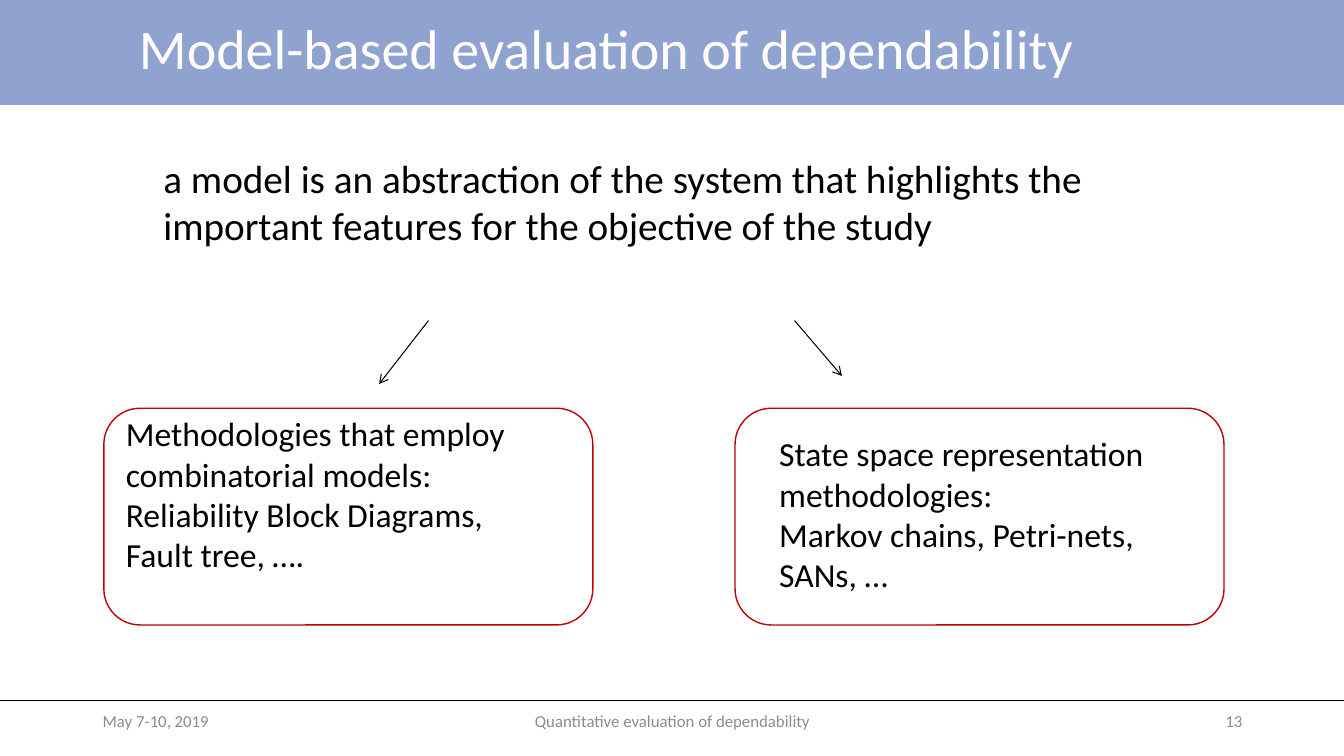
"""Build the slide on model-based evaluation of dependability."""
from dataclasses import dataclass

from lxml.etree import SubElement
from pptx import Presentation
from pptx.dml.color import RGBColor
from pptx.enum.shapes import MSO_CONNECTOR as Connector, MSO_SHAPE as Shape
from pptx.enum.text import MSO_ANCHOR as Anchor, MSO_AUTO_SIZE as AutoSize, PP_ALIGN as Align
from pptx.oxml.ns import qn
from pptx.util import Pt

PX = 9144
WIDTH, HEIGHT = 1333, 750


@dataclass(frozen=True)
class Theme:
    font: str = "Calibri"
    band: RGBColor = RGBColor(0x90, 0xA2, 0xCF)
    white: RGBColor = RGBColor(0xFF, 0xFF, 0xFF)
    ink: RGBColor = RGBColor(0x00, 0x00, 0x00)
    muted: RGBColor = RGBColor(0x8C, 0x8C, 0x8C)
    frame: RGBColor = RGBColor(0xC0, 0x00, 0x00)
    title_size: int = 40
    body_size: int = 28
    family_size: int = 24
    footer_size: int = 12


@dataclass(frozen=True)
class Rect:
    left: int
    top: int
    width: int
    height: int

    def emu(self) -> tuple[int, int, int, int]:
        return self.left * PX, self.top * PX, self.width * PX, self.height * PX


@dataclass(frozen=True)
class Style:
    size: int
    color: RGBColor
    align: Align = Align.LEFT
    anchor: Anchor = Anchor.TOP
    spacing: float = 1.0


@dataclass(frozen=True)
class Family:
    lines: tuple[str, ...]
    text: Rect
    frame: Rect
    arrow: tuple[int, int, int, int]


@dataclass(frozen=True)
class FooterItem:
    words: str
    rect: Rect
    align: Align


THEME = Theme()
TITLE = Style(THEME.title_size, THEME.white, Align.CENTER, Anchor.MIDDLE, 0.9)
BODY = Style(THEME.body_size, THEME.ink)
FAMILY = Style(THEME.family_size, THEME.ink)

FAMILIES = (
    Family(
        ("Methodologies that employ combinatorial models:",
         "Reliability Block Diagrams, Fault tree, …."),
        Rect(115, 405, 424, 172), Rect(103, 405, 485, 215), (425, 318, 376, 381),
    ),
    Family(
        ("State space representation methodologies:",
         "Markov chains, Petri-nets, SANs, …"),
        Rect(763, 425, 400, 172), Rect(729, 405, 485, 215), (788, 318, 835, 373),
    ),
)
FOOTER = (
    FooterItem("May 7-10, 2019", Rect(92, 695, 300, 40), Align.LEFT),
    FooterItem("Quantitative evaluation of dependability", Rect(442, 695, 450, 40), Align.CENTER),
    FooterItem("13", Rect(942, 695, 300, 40), Align.RIGHT),
)


def write(box, lines: tuple[str, ...], style: Style) -> None:
    """Fill a box with lines of one paragraph."""
    frame = box.text_frame
    frame.word_wrap = True
    frame.auto_size = AutoSize.NONE
    frame.vertical_anchor = style.anchor
    para = frame.paragraphs[0]
    para.alignment = style.align
    para.line_spacing = style.spacing
    para.space_before = Pt(0)
    for index, line in enumerate(lines):
        if index:
            para.add_line_break()
        span = para.add_run()
        span.text = line
        span.font.name = THEME.font
        span.font.size = Pt(style.size)
        span.font.color.rgb = style.color


def place(box, rect: Rect) -> None:
    """Move a placeholder to a rectangle."""
    box.left, box.top, box.width, box.height = rect.emu()


def add_text(page, lines: tuple[str, ...], rect: Rect, style: Style) -> None:
    """Add a text box."""
    write(page.shapes.add_textbox(*rect.emu()), lines, style)


def add_line(page, ends: tuple[int, int, int, int], weight: float, arrow: bool = False) -> None:
    """Add a straight line, with an open arrowhead if wanted."""
    line = page.shapes.add_connector(Connector.STRAIGHT, *(end * PX for end in ends))
    line.line.color.rgb = THEME.ink
    line.line.width = Pt(weight)
    if arrow:
        SubElement(line.line._get_or_add_ln(), qn("a:tailEnd"), type="arrow")
    SubElement(line.element.spPr, qn("a:effectLst"))


def add_band(page) -> None:
    """Add the coloured band behind the title."""
    band = page.shapes.add_shape(Shape.RECTANGLE, *Rect(0, 0, WIDTH, 104).emu())
    band.shadow.inherit = False
    band.fill.solid()
    band.fill.fore_color.rgb = THEME.band
    band.line.fill.background()
    page.shapes.title.element.addprevious(band.element)


def add_frame(page, rect: Rect) -> None:
    """Add an unfilled rounded outline."""
    frame = page.shapes.add_shape(Shape.ROUNDED_RECTANGLE, *rect.emu())
    frame.shadow.inherit = False
    frame.fill.background()
    frame.line.color.rgb = THEME.frame
    frame.line.width = Pt(1)


def add_statement(page) -> None:
    """Fill the body placeholder with the unbulleted statement."""
    body = page.placeholders[1]
    place(body, Rect(152, 148, 1062, 136))
    props = body.text_frame.paragraphs[0]._p.get_or_add_pPr()
    props.set("marL", "0")
    props.set("indent", "0")
    SubElement(props, qn("a:buNone"))
    write(body, ("a model is an abstraction of the system that highlights the "
                 "important features for the objective of the study",), BODY)


def main() -> None:
    """Build and save the deck."""
    deck = Presentation()
    deck.slide_width, deck.slide_height = WIDTH * PX, HEIGHT * PX
    page = deck.slides.add_slide(deck.slide_layouts[1])
    add_band(page)
    place(page.shapes.title, Rect(0, 0, 1202, 102))
    write(page.shapes.title, ("Model-based evaluation of dependability",), TITLE)
    add_statement(page)
    for family in FAMILIES:
        add_text(page, family.lines, family.text, FAMILY)
        add_line(page, family.arrow, 0.75, arrow=True)
        add_frame(page, family.frame)
    add_line(page, (0, 695, WIDTH, 695), 0.5)
    for item in FOOTER:
        style = Style(THEME.footer_size, THEME.muted, item.align, Anchor.MIDDLE)
        add_text(page, (item.words,), item.rect, style)
    deck.save("out.pptx")


if __name__ == "__main__":
    main()
